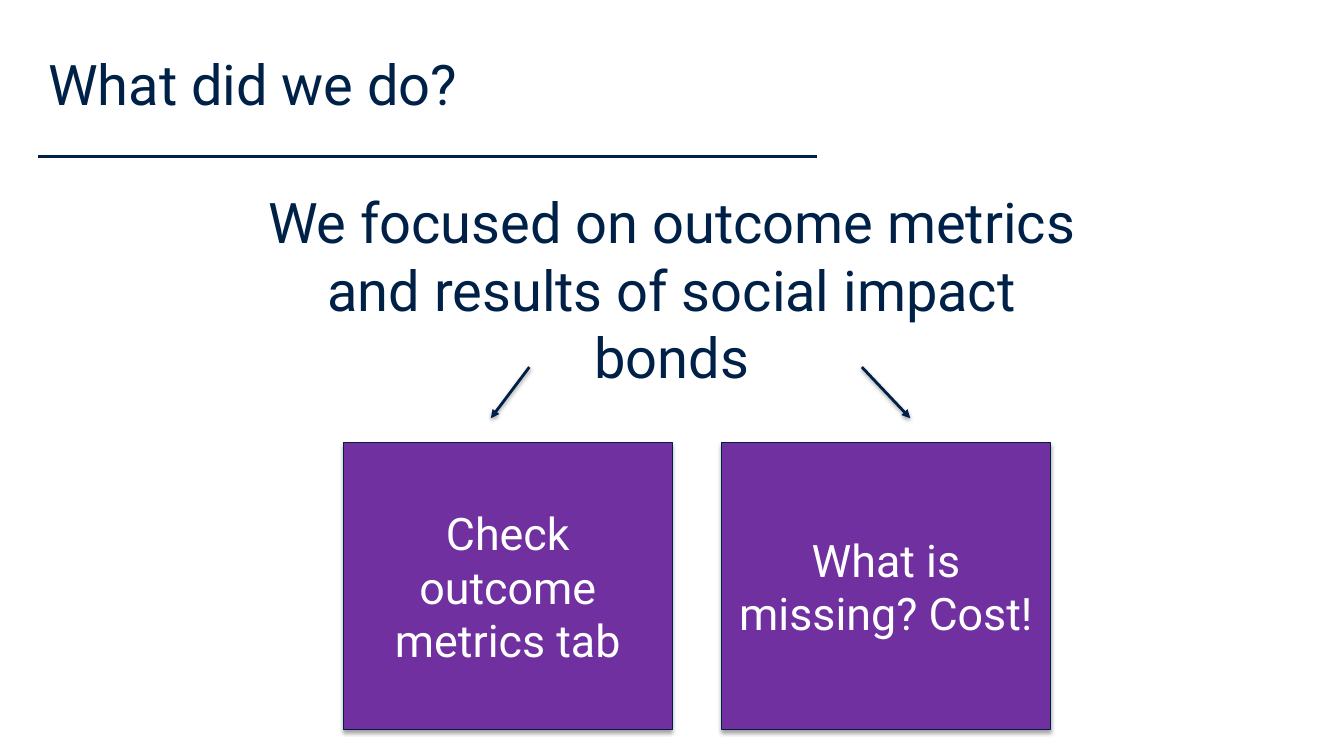
from lxml import etree
from pptx import Presentation
from pptx.dml.color import RGBColor
from pptx.enum import shapes, text
from pptx.oxml import ns
from pptx.util import Cm, Pt

NAVY = RGBColor(0x00, 0x21, 0x47)
DARK_NAVY = RGBColor(0x00, 0x1F, 0x45)
PURPLE = RGBColor(0x70, 0x30, 0xA0)
WHITE = RGBColor(0xFF, 0xFF, 0xFF)
FONT = "Roboto"


def add_effects(shape, shadow_opacity=0, distance=0):
    """Replace the theme's shadow with a soft one below, or with none."""
    properties = shape._element.spPr
    effects = etree.SubElement(properties, ns.qn("a:effectLst"))
    if shadow_opacity:
        shadow = etree.SubElement(
            effects, ns.qn("a:outerShdw"), blurRad=str(Pt(3.1)),
            dist=str(Pt(distance)), dir="5400000", rotWithShape="0")
        color = etree.SubElement(shadow, ns.qn("a:srgbClr"), val="000000")
        etree.SubElement(color, ns.qn("a:alpha"), val=str(shadow_opacity * 1000))


def write_text(shape, content, size, color, alignment):
    frame = shape.text_frame
    frame.word_wrap = True
    frame.vertical_anchor = text.MSO_ANCHOR.MIDDLE
    paragraph = frame.paragraphs[0]
    paragraph.alignment = alignment
    run = paragraph.add_run()
    run.text = content
    run.font.name = FONT
    run.font.size = Pt(size)
    run.font.color.rgb = color


def add_heading(slide, content, left, top, width, height, alignment):
    box = slide.shapes.add_textbox(Cm(left), Cm(top), Cm(width), Cm(height))
    write_text(box, content, 40, NAVY, alignment)


def add_box(slide, content, left):
    box = slide.shapes.add_shape(
        shapes.MSO_SHAPE.RECTANGLE, Cm(left), Cm(11.15), Cm(8.28), Cm(7.24))
    box.fill.solid()
    box.fill.fore_color.rgb = PURPLE
    box.line.color.rgb = DARK_NAVY
    box.line.width = Pt(0.75)
    add_effects(box, 35, 1.8)
    write_text(box, content, 32, WHITE, text.PP_ALIGN.CENTER)


def add_line(slide, start_x, start_y, end_x, end_y):
    line = slide.shapes.add_connector(
        shapes.MSO_CONNECTOR.STRAIGHT,
        Cm(start_x), Cm(start_y), Cm(end_x), Cm(end_y))
    line.line.color.rgb = NAVY
    line.line.width = Pt(2)
    return line


def add_arrow(slide, start_x, end_x):
    arrow = add_line(slide, start_x, 9.25, end_x, 10.54)
    etree.SubElement(arrow.line._get_or_add_ln(), ns.qn("a:tailEnd"), type="triangle")
    add_effects(arrow, 38, 1.6)


def main():
    presentation = Presentation()
    presentation.slide_width = Cm(33.87)
    presentation.slide_height = Cm(19.05)
    slide = presentation.slides.add_slide(presentation.slide_layouts[6])

    add_effects(add_line(slide, 0.97, 3.94, 20.6, 3.94))
    add_heading(slide, "What did we do?", 0.97, 0.25, 20.27, 3.68,
                text.PP_ALIGN.LEFT)
    add_heading(slide, "We focused on outcome metrics and results of social impact bonds",
                6.17, 3.4, 21.51, 7.75, text.PP_ALIGN.CENTER)
    add_box(slide, "Check outcome metrics tab", 8.66)
    add_box(slide, "What is missing? Cost!", 18.19)
    add_arrow(slide, 13.34, 12.37)
    add_arrow(slide, 21.72, 22.94)

    presentation.save("out.pptx")


if __name__ == "__main__":
    main()
